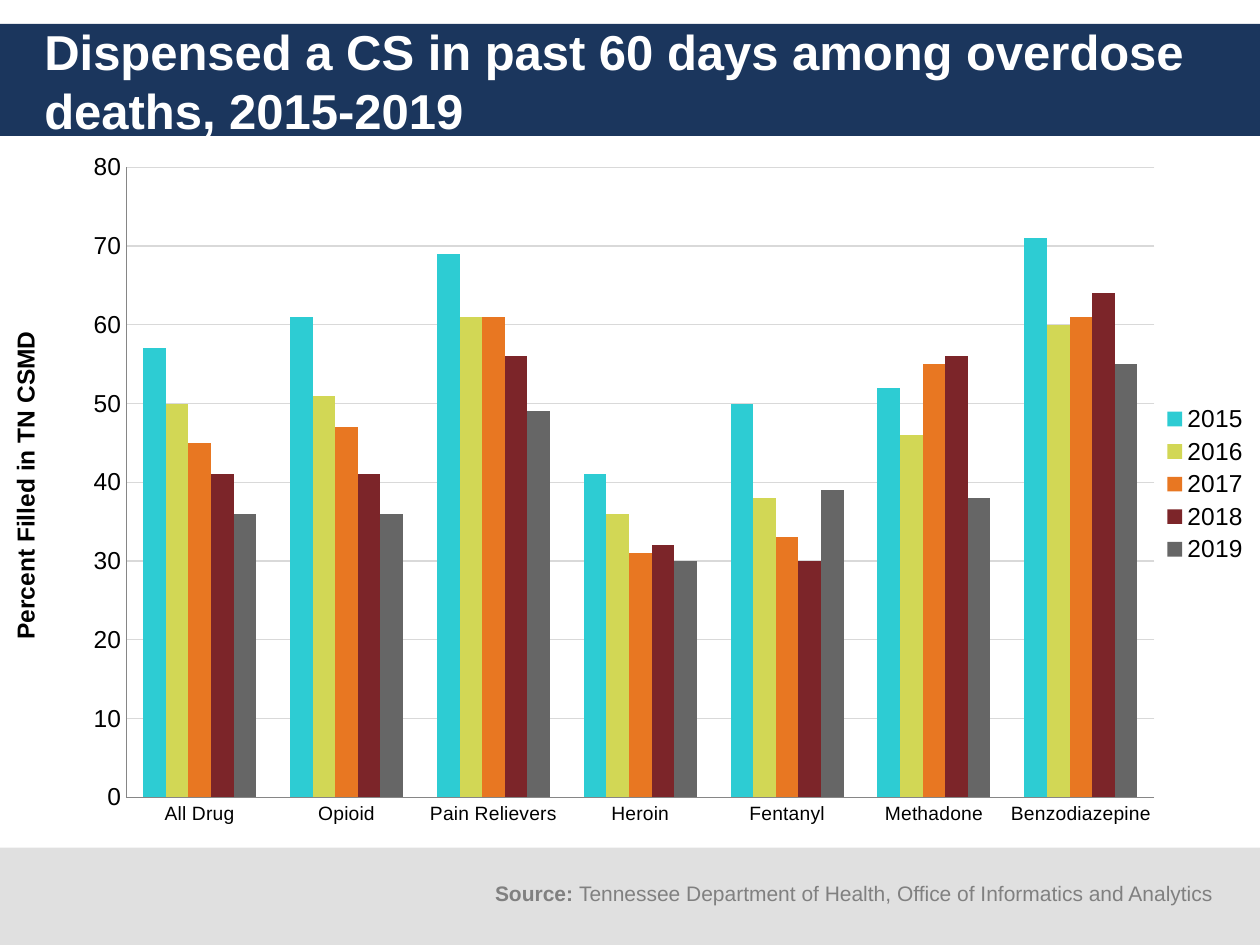
from typing import NamedTuple

from lxml.etree import SubElement
from pptx import Presentation
from pptx.chart.data import CategoryChartData
from pptx.dml.color import RGBColor
from pptx.enum.chart import XL_CHART_TYPE, XL_LEGEND_POSITION, XL_TICK_MARK
from pptx.enum.shapes import MSO_SHAPE
from pptx.enum.text import MSO_ANCHOR, MSO_AUTO_SIZE, PP_ALIGN
from pptx.oxml.ns import qn
from pptx.util import Cm, Pt

FONT = "Arial"


class Area(NamedTuple):
    left: float
    top: float
    width: float
    height: float

    def lengths(self):
        return [Cm(value) for value in self]


class YearSeries(NamedTuple):
    year: str
    percents: tuple
    fill: str


CATEGORIES = ["All Drug", "Opioid", "Pain Relievers", "Heroin",
              "Fentanyl", "Methadone", "Benzodiazepine"]
YEARS = [
    YearSeries("2015", (57, 61, 69, 41, 50, 52, 71), "2DCCD3"),
    YearSeries("2016", (50, 51, 61, 36, 38, 46, 60), "D2D755"),
    YearSeries("2017", (45, 47, 61, 31, 33, 55, 61), "E87722"),
    YearSeries("2018", (41, 41, 56, 32, 30, 56, 64), "7C2529"),
    YearSeries("2019", (36, 36, 49, 30, 39, 38, 55), "666666"),
]
BANDS = [(Area(0, 0.48, 25.4, 2.26), "1B365D"),
         (Area(0, 17.09, 25.4, 1.96), "E0E0E0")]
PLOT = {"x": 0.1, "y": 0.04, "w": 0.82, "h": 0.91}
PLOT = {"x": 0.099, "y": 0.042, "w": 0.816, "h": 0.911}


def color(value: str) -> RGBColor:
    return RGBColor.from_string(value)


def format_font(font, size: float, fill: str = "000000", bold: bool = False) -> None:
    font.name, font.size, font.bold = FONT, Pt(size), bold
    font.color.rgb = color(fill)


def add_span(para, text: str, **style) -> None:
    span = para.add_run()
    span.text = text
    format_font(span.font, **style)


def add_band(page, area: Area, fill: str) -> None:
    band = page.shapes.add_shape(MSO_SHAPE.RECTANGLE, *area.lengths())
    band.shadow.inherit = False
    band.fill.solid()
    band.fill.fore_color.rgb = color(fill)
    band.line.fill.background()


def add_box(page, area: Area):
    box = page.shapes.add_textbox(*area.lengths())
    box.text_frame.word_wrap = True
    return box


def place_title(page, text: str, area: Area) -> None:
    title = page.shapes.title
    title.left, title.top, title.width, title.height = area.lengths()
    frame = title.text_frame
    frame.auto_size = MSO_AUTO_SIZE.NONE
    frame.vertical_anchor = MSO_ANCHOR.MIDDLE
    para = frame.paragraphs[0]
    para.alignment = PP_ALIGN.LEFT
    add_span(para, text, size=28, fill="FFFFFF", bold=True)
    # Bring the title in front of the bands
    title.element.getparent().append(title.element)


def format_axis(axis, size: float) -> None:
    axis.major_tick_mark = axis.minor_tick_mark = XL_TICK_MARK.NONE
    axis.has_title = False
    format_font(axis.tick_labels.font, size)
    axis.format.line.color.rgb = color("868686")
    axis.format.line.width = Pt(0.75)


def set_plot_area(chart) -> None:
    plot_area = chart.element.find(".//" + qn("c:plotArea"))
    layout = plot_area.find(qn("c:layout"))
    if layout is None:
        layout = SubElement(plot_area, qn("c:layout"))
        plot_area.insert(0, layout)
    manual = SubElement(layout, qn("c:manualLayout"))
    settings = {"layoutTarget": "inner", "xMode": "edge", "yMode": "edge", **PLOT}
    for name, value in settings.items():
        SubElement(manual, qn("c:" + name)).set("val", str(value))


def add_percent_chart(page, area: Area) -> None:
    data = CategoryChartData()
    data.categories = CATEGORIES
    for series in YEARS:
        data.add_series(series.year, series.percents)
    chart = page.shapes.add_chart(
        XL_CHART_TYPE.COLUMN_CLUSTERED, *area.lengths(), data).chart
    chart.has_title = False
    format_font(chart.font, 10)

    plot = chart.plots[0]
    plot.vary_by_categories = False
    plot.gap_width, plot.overlap = 150, 0
    for columns, series in zip(plot.series, YEARS):
        columns.format.fill.solid()
        columns.format.fill.fore_color.rgb = color(series.fill)

    format_axis(chart.category_axis, 11)
    value_axis = chart.value_axis
    format_axis(value_axis, 14)
    value_axis.minimum_scale, value_axis.maximum_scale = 0, 80
    value_axis.major_unit = 10
    grid = value_axis.major_gridlines.format.line
    grid.color.rgb = color("D9D9D9")
    grid.width = Pt(0.75)

    chart.has_legend = True
    chart.legend.position = XL_LEGEND_POSITION.RIGHT
    chart.legend.include_in_layout = False
    format_font(chart.legend.font, 14)
    set_plot_area(chart)


def main() -> None:
    deck = Presentation()
    deck.slide_width, deck.slide_height = Cm(25.4), Cm(19.05)
    page = deck.slides.add_slide(deck.slide_layouts[5])

    # Header and footer bands, then the title
    for area, fill in BANDS:
        add_band(page, area, fill)
    place_title(page, "Dispensed a CS in past 60 days among overdose deaths, 2015-2019",
                Area(0.64, 0.48, 24.76, 2.29))

    # Chart with its rotated axis label
    add_percent_chart(page, Area(0.03, 2.79, 25.4, 13.94))
    label = add_box(page, Area(0.08, 5.89, 1.12, 7.26))
    label.text_frame._txBody.bodyPr.set("vert", "vert270")
    add_span(label.text_frame.paragraphs[0], "Percent Filled in TN CSMD",
             size=14, bold=True)

    # Source line
    source = add_box(page, Area(9.73, 17.63, 15.24, 0.76))
    para = source.text_frame.paragraphs[0]
    add_span(para, "Source: ", size=12, fill="808080", bold=True)
    add_span(para, "Tennessee Department of Health, Office of Informatics and Analytics",
             size=12, fill="808080")

    deck.save("out.pptx")


if __name__ == "__main__":
    main()
